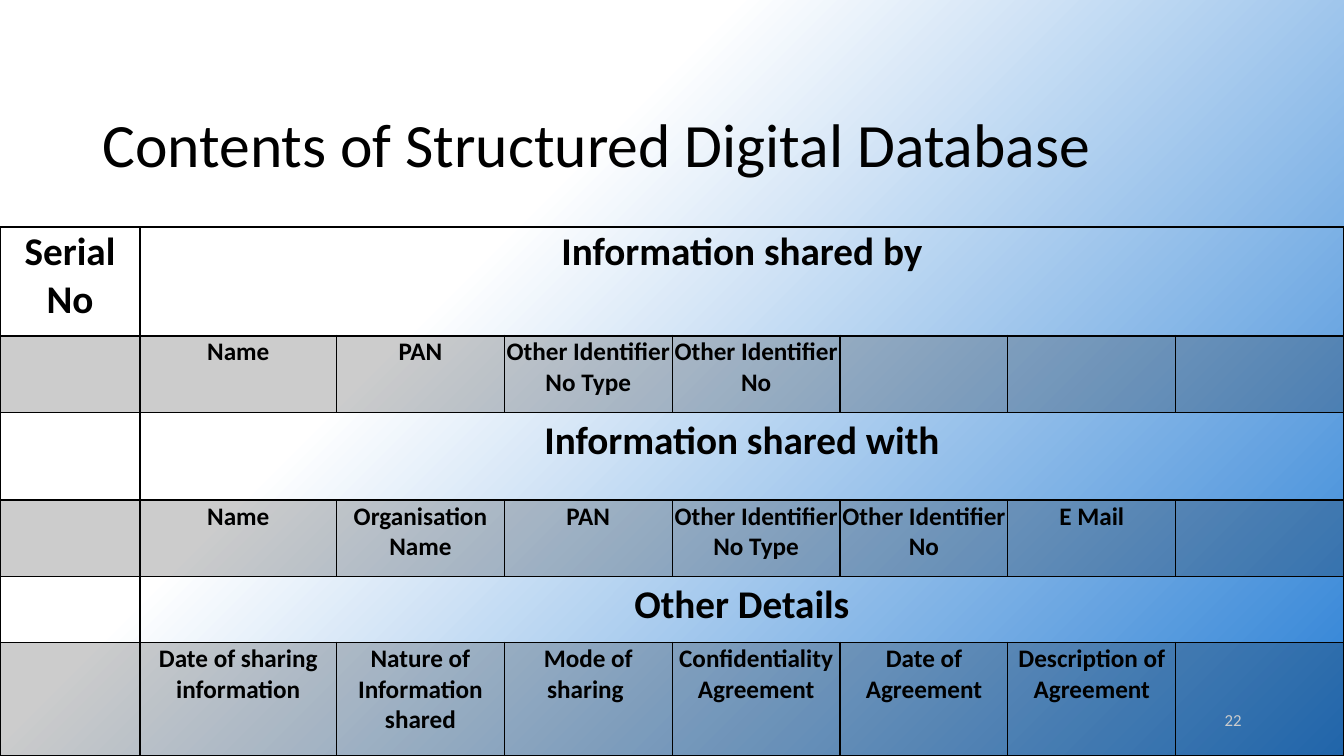
"""Build the slide on the contents of a structured digital database."""
from lxml import etree
from pptx import Presentation
from pptx import util as u
from pptx.dml import color
from pptx.enum import text
from pptx.oxml import ns

COLORS = {"ink": "000000", "paper": "FFFFFF", "blue": "297FD5"}
FONT = "Calibri"
COLUMN_WIDTHS = [3.53, 4.95] + [4.23] * 6
ROW_HEIGHTS = [2.74, 1.93, 2.21, 1.93, 1.65, 2.87]
SECTIONS = [
    ("Serial No", "Information shared by",
     ["Name", "PAN", "Other Identifier No Type", "Other Identifier No"]),
    ("", "Information shared with",
     ["Name", "Organisation Name", "PAN", "Other Identifier No Type",
      "Other Identifier No", "E Mail"]),
    ("", "Other Details",
     ["Date of sharing information", "Nature of Information shared",
      "Mode of sharing ", "Confidentiality Agreement",
      "Date of Agreement", "Description of Agreement"]),
]


def rgb(name):
    return color.RGBColor.from_string(COLORS[name])


def style_paragraph(para, size, ink, align, bold=False):
    para.alignment = align
    para.font.name = FONT
    para.font.size = u.Pt(size)
    para.font.bold = bold
    para.font.color.rgb = rgb(ink)


def paint_background(page):
    fill = page.background.fill
    fill.gradient()
    fill.gradient_angle = 315
    for stop, position, name in zip(fill.gradient_stops, (0.35, 1), ("paper", "blue")):
        stop.position = position
        stop.color.rgb = rgb(name)


def add_text(page, place, words, size, ink, align, anchor):
    box = page.shapes.add_textbox(*map(u.Cm, place))
    frame = box.text_frame
    frame.word_wrap = True
    frame.vertical_anchor = anchor
    para = frame.paragraphs[0]
    para.text = words
    para.line_spacing = 0.9
    style_paragraph(para, size, ink, align)


def set_borders(cell, top, bottom):
    properties = cell._tc.get_or_add_tcPr()
    widths = {"L": 1, "R": 1, "T": top, "B": bottom}
    for index, (side, width) in enumerate(widths.items()):
        line = etree.Element(ns.qn(f"a:ln{side}"), w=str(u.Pt(width)))
        fill = etree.SubElement(line, ns.qn("a:solidFill"))
        etree.SubElement(fill, ns.qn("a:srgbClr"), val=COLORS["ink"])
        properties.insert(index, line)


def shade_cell(cell):
    cell.fill.solid()
    cell.fill.fore_color.rgb = rgb("ink")
    tint = cell._tc.tcPr.find(".//" + ns.qn("a:srgbClr"))
    etree.SubElement(tint, ns.qn("a:alpha"), val="20000")


def write_cell(cell, words, size, tight):
    if tight:
        cell.margin_left = cell.margin_right = cell.margin_top = u.Cm(0.03)
        cell.margin_bottom = 0
    para = cell.text_frame.paragraphs[0]
    para.text = words
    style_paragraph(para, size, "ink", text.PP_ALIGN.CENTER, bold=True)


def add_contents_table(page):
    frame = page.shapes.add_table(
        len(ROW_HEIGHTS), len(COLUMN_WIDTHS), 0, u.Cm(5.72),
        u.Cm(sum(COLUMN_WIDTHS)), u.Cm(sum(ROW_HEIGHTS)))
    table = frame.table
    table.first_row = table.horz_banding = False
    for column, width in zip(table.columns, COLUMN_WIDTHS):
        column.width = u.Cm(width)
    for row_index, height in enumerate(ROW_HEIGHTS):
        row = table.rows[row_index]
        row.height = u.Cm(height)
        for cell in row.cells:
            if row_index % 2:
                shade_cell(cell)
            else:
                cell.fill.background()
            set_borders(cell, 2 if row_index == 1 else 1, 2 if row_index == 0 else 1)
    for index, (serial, heading, fields) in enumerate(SECTIONS):
        head = 2 * index
        table.cell(head, 1).merge(table.cell(head, len(COLUMN_WIDTHS) - 1))
        write_cell(table.cell(head, 1), heading, 28, tight=index == 0)
        if serial:
            write_cell(table.cell(head, 0), serial, 28, tight=True)
        for column, field in enumerate(fields, 1):
            write_cell(table.cell(head + 1, column), field, 18, tight=True)


def main():
    deck = Presentation()
    deck.slide_width, deck.slide_height = u.Cm(33.87), u.Cm(19.05)
    page = deck.slides.add_slide(deck.slide_layouts[6])
    paint_background(page)
    add_text(page, (2.33, 1.01, 29.21, 3.68), "Contents of Structured Digital Database",
             44, "ink", text.PP_ALIGN.LEFT, text.MSO_ANCHOR.BOTTOM)
    add_text(page, (23.92, 17.66, 7.62, 1.01), "22",
             12, "paper", text.PP_ALIGN.RIGHT, text.MSO_ANCHOR.MIDDLE)
    add_contents_table(page)
    deck.save("out.pptx")


if __name__ == "__main__":
    main()
